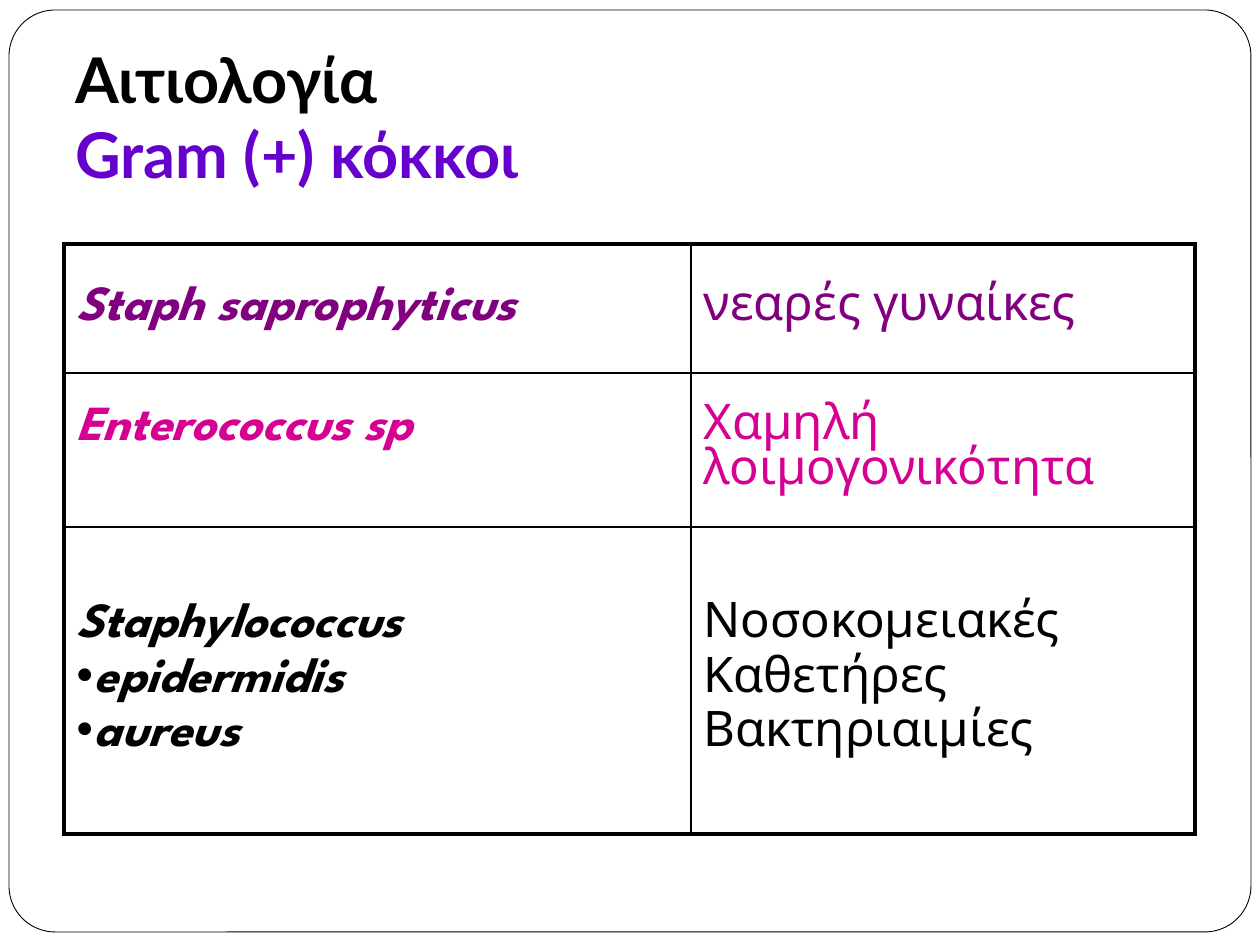
from lxml import etree
from pptx import Presentation
from pptx import util as u
from pptx.dml.color import RGBColor
from pptx.enum import shapes, text
from pptx.oxml.ns import qn

EMU_PER_PX = 914400 / 126
COLORS = {"black": "000000", "white": "FFFFFF", "violet": "6600CC",
          "purple": "800080", "magenta": "D60093"}


def px(*lengths):
    return [u.Emu(round(length * EMU_PER_PX)) for length in lengths]


def style(font, color, **values):
    font.color.rgb = RGBColor.from_string(COLORS[color])
    for name, value in values.items():
        setattr(font, name, value)


deck = Presentation()
deck.slide_width, deck.slide_height = px(1260, 945)
slide = deck.slides.add_slide(deck.slide_layouts[5])

# Rounded frame, behind the title
frame = slide.shapes.add_shape(shapes.MSO_SHAPE.ROUNDED_RECTANGLE, *px(9, 10, 1242, 922))
frame.adjustments[0] = 0.05
frame.shadow.inherit = False
frame.fill.solid()
frame.fill.fore_color.rgb = RGBColor.from_string(COLORS["white"])
frame.line.color.rgb = RGBColor.from_string(COLORS["black"])
frame.line.width = u.Pt(0.5)
slide.shapes._spTree.insert(2, frame._element)

# Title
title = slide.shapes.title
title.left, title.top, title.width, title.height = px(63, 0, 1134, 204)
heading = title.text_frame
title_format = {"word_wrap": True, "auto_size": text.MSO_AUTO_SIZE.NONE,
                "vertical_anchor": text.MSO_ANCHOR.BOTTOM,
                "margin_left": u.Inches(0.1), "margin_right": u.Inches(0.1),
                "margin_top": u.Inches(0.05), "margin_bottom": u.Inches(0.1)}
for name, value in title_format.items():
    setattr(heading, name, value)
heading_line = heading.paragraphs[0]
heading_line.alignment = text.PP_ALIGN.LEFT
for words, color in [("Αιτιολογία", "black"), ("Gram (+) κόκκοι", "violet")]:
    if heading_line.runs:
        heading_line.add_line_break()
    run = heading_line.add_run()
    run.text = words
    style(run.font, color, name="Lato", size=u.Pt(36), bold=True)

# Table of cocci: color, species lines, clinical setting lines
cocci = [
    ("purple", ["Staph saprophyticus"], ["νεαρές γυναίκες"]),
    ("magenta", ["Enterococcus sp"], ["Χαμηλή λοιμογονικότητα"]),
    ("black", ["Staphylococcus", "epidermidis", "aureus"],
     ["Νοσοκομειακές", "Καθετήρες", "Βακτηριαιμίες"]),
]
col_widths, row_heights = px(627, 504), px(129, 154, 307)
table = slide.shapes.add_table(len(cocci), 2, *px(64, 244, 1131, 590)).table
table.first_row = table.horz_banding = False
for column, width in zip(table.columns, col_widths):
    column.width = width
for row, height in zip(table.rows, row_heights):
    row.height = height

last_row = len(cocci) - 1
for r, (color, *columns) in enumerate(cocci):
    for c, lines in enumerate(columns):
        cell = table.cell(r, c)
        cell.vertical_anchor = text.MSO_ANCHOR.MIDDLE
        is_species = c == 0

        # Cell text, with bullets on the species under a genus
        for i, words in enumerate(lines):
            body = cell.text_frame
            line = body.paragraphs[0] if i == 0 else body.add_paragraph()
            if i:
                line.space_before = u.Pt(5.6)
                if is_species:
                    etree.SubElement(line._p.get_or_add_pPr(), qn("a:buChar"), char="•")
            run = line.add_run()
            run.text = words
            style(run.font, color, name="League Spartan", size=u.Pt(28),
                  bold=is_species, italic=is_species)

        # Borders: thick around the table, thin inside
        outer = {"L": c == 0, "R": c == 1, "T": r == 0, "B": r == last_row}
        properties = cell._tc.get_or_add_tcPr()
        for side, is_outer in outer.items():
            border = etree.SubElement(properties, qn(f"a:ln{side}"),
                                      w=str(u.Pt(2.25 if is_outer else 1)))
            fill = etree.SubElement(border, qn("a:solidFill"))
            etree.SubElement(fill, qn("a:srgbClr"), val=COLORS["black"])
        cell.fill.background()

# The single name in the middle row lines up with the first line beside it
table.cell(1, 0).margin_bottom = px(48)[0]

deck.save("out.pptx")
